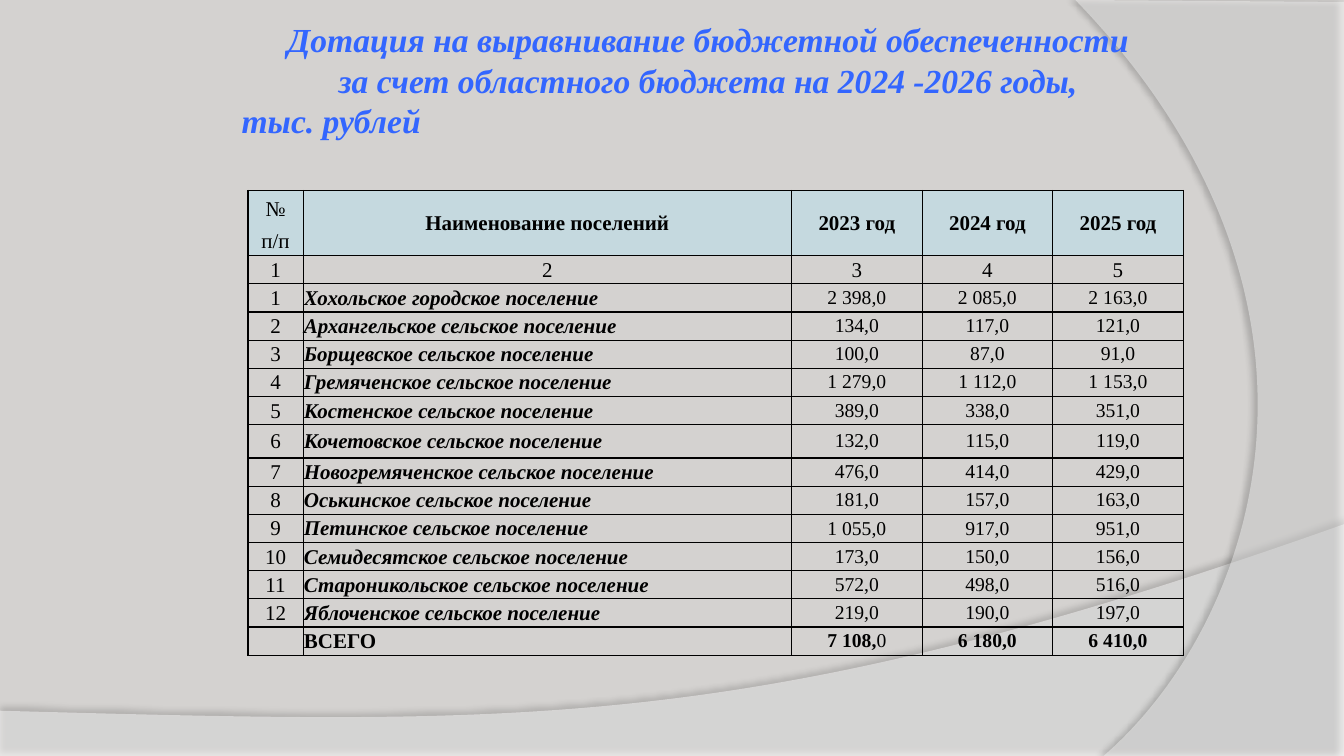
from lxml import etree
from pptx import Presentation
from pptx import util as u
from pptx.dml.color import RGBColor
from pptx.enum import text
from pptx.oxml.ns import qn

FONT = "Times New Roman"
BLACK, WHITE, HEADER, TITLE = "000000", "FFFFFF", "C5D9DF", "3366FF"
CENTER, LEFT, JUSTIFY = text.PP_ALIGN.CENTER, text.PP_ALIGN.LEFT, text.PP_ALIGN.JUSTIFY
MIDDLE = text.MSO_ANCHOR.MIDDLE
WIDTH, HEIGHT = 33.87, 19.05

# Wording, alignment and left indent of each line
TITLE_LINES = [
    ("Дотация на выравнивание бюджетной обеспеченности ", CENTER, 0),
    ("за счет областного бюджета на 2024 -2026 годы, ", CENTER, 0),
    ("тыс. рублей", LEFT, 0.12),
]
HEADINGS = ["№", "Наименование поселений", "2023 год", "2024 год", "2025 год"]
SETTLEMENTS = [
    ("Хохольское городское поселение", "2 398,0", "2 085,0", "2 163,0"),
    ("Архангельское сельское поселение", "134,0", "117,0", "121,0"),
    ("Борщевское сельское поселение", "100,0", "87,0", "91,0"),
    ("Гремяченское сельское поселение", "1 279,0", "1 112,0", "1 153,0"),
    ("Костенское сельское поселение", "389,0", "338,0", "351,0"),
    ("Кочетовское сельское поселение", "132,0", "115,0", "119,0"),
    ("Новогремяченское сельское поселение", "476,0", "414,0", "429,0"),
    ("Оськинское сельское поселение", "181,0", "157,0", "163,0"),
    ("Петинское сельское поселение", "1 055,0", "917,0", "951,0"),
    ("Семидесятское сельское поселение", "173,0", "150,0", "156,0"),
    ("Староникольское сельское поселение", "572,0", "498,0", "516,0"),
    ("Яблоченское сельское поселение", "219,0", "190,0", "197,0"),
]
COLUMN_WIDTHS = [1.39, 12.31, 3.29, 3.29, 3.29]
ROW_HEIGHTS = [0.93] + [0.71] * 7 + [0.84] + [0.71] * 7


def rgb(value):
    return RGBColor.from_string(value)


def set_attrs(obj, formats):
    for name, value in formats.items():
        setattr(obj, name, value)


def add_run(p, content, size, color=BLACK, **formats):
    r = p.add_run()
    r.text = content
    set_attrs(r.font, {"name": FONT, "size": u.Pt(size), **formats})
    r.font.color.rgb = rgb(color)


def add_wave(s, corners, controls, opacity, shadow_opacity, distance, angle):
    """Draw a translucent outline, closed by a curve from the last corner to the first."""
    points = [(u.Cm(x), u.Cm(y)) for x, y in corners]
    builder = s.shapes.build_freeform(*points[0])
    builder.add_line_segments(points[1:], close=True)
    sp = builder.convert_to_shape()
    spPr = sp._element.spPr
    closing = next(spPr.iter(qn("a:close")))
    curve = etree.Element(qn("a:cubicBezTo"))
    for x, y in [*controls, corners[0]]:
        etree.SubElement(curve, qn("a:pt"), x=str(u.Cm(x) - sp.left), y=str(u.Cm(y) - sp.top))
    previous = closing.getprevious()
    # Closing may add a straight segment back to the first corner
    if len(list(spPr.iter(qn("a:lnTo")))) == len(corners):
        previous.getparent().remove(previous)
    closing.addprevious(curve)
    sp.fill.solid()
    sp.fill.fore_color.rgb = rgb(WHITE)
    sp.line.fill.background()
    clr = next(spPr.iter(qn("a:srgbClr")))
    etree.SubElement(clr, qn("a:alpha"), val=str(opacity * 1000))
    sp.shadow.inherit = False
    effects = spPr.find(qn("a:effectLst"))
    shadow = etree.SubElement(effects, qn("a:outerShdw"), blurRad=str(u.Pt(4)),
                              dist=str(u.Pt(distance)), dir=str(angle * 60000),
                              rotWithShape="0")
    clr = etree.SubElement(shadow, qn("a:srgbClr"), val=BLACK)
    etree.SubElement(clr, qn("a:alpha"), val=str(shadow_opacity * 1000))


def add_title(s):
    tf = s.shapes.add_textbox(u.Cm(5.72), u.Cm(0.36), u.Cm(24.46), u.Cm(3.33)).text_frame
    tf.word_wrap = True
    for i, (line, alignment, indent) in enumerate(TITLE_LINES):
        p = tf.paragraphs[0] if i == 0 else tf.add_paragraph()
        p.alignment = alignment
        p._p.get_or_add_pPr().set("marL", str(u.Cm(indent)))
        add_run(p, line, 24, TITLE, bold=True, italic=True)


def set_borders(cell, hidden):
    """Draw all four borders but the hidden one."""
    tcPr = cell._tc.get_or_add_tcPr()
    for i, side in enumerate("LRTB"):
        ln = etree.Element(qn("a:ln" + side), w=str(u.Pt(1)))
        if side == hidden:
            etree.SubElement(ln, qn("a:noFill"))
        else:
            fill = etree.SubElement(ln, qn("a:solidFill"))
            etree.SubElement(fill, qn("a:srgbClr"), val=BLACK)
        tcPr.insert(i, ln)


def format_cell(cell, row, col):
    if row < 2:
        cell.fill.solid()
        cell.fill.fore_color.rgb = rgb(HEADER)
    else:
        cell.fill.background()
    side, top = (0.18, 0) if row > 2 and col > 1 else (0.02, 0.02)
    set_attrs(cell, {"vertical_anchor": MIDDLE, "margin_left": u.Cm(side),
                     "margin_right": u.Cm(side), "margin_top": u.Cm(top),
                     "margin_bottom": 0})
    set_borders(cell, {(0, 0): "B", (1, 0): "T"}.get((row, col)))
    p = cell.text_frame.paragraphs[0]
    p.alignment = JUSTIFY if row > 2 and col == 1 else CENTER
    p._p.get_or_add_endParaRPr().set("sz", "1400")
    return p


def add_grants_table(s):
    rows = [HEADINGS, ["п/п", "", "", "", ""], list("12345")]
    rows += [[str(n), *values] for n, values in enumerate(SETTLEMENTS, 1)]
    rows.append(["", "ВСЕГО", "7 108,0", "6 180,0", "6 410,0"])
    total = len(rows) - 1
    frame = s.shapes.add_table(len(rows), len(HEADINGS), u.Cm(6.25), u.Cm(4.8),
                               u.Cm(sum(COLUMN_WIDTHS)), u.Cm(sum(ROW_HEIGHTS)))
    table = frame.table
    set_attrs(table, {"first_row": False, "horz_banding": False})
    for column, width in zip(table.columns, COLUMN_WIDTHS):
        column.width = u.Cm(width)
    for row, height in zip(table.rows, ROW_HEIGHTS):
        row.height = u.Cm(height)
    for col in range(1, len(HEADINGS)):
        table.cell(0, col).merge(table.cell(1, col))
    for i, row in enumerate(rows):
        for j, content in enumerate(row):
            p = format_cell(table.cell(i, j), i, j)
            size = 14 if i > 2 and j > 1 else 15
            bold = i == total or (i == 0 and j > 0) or (i > 2 and j == 1)
            italic = 2 < i < total and j == 1
            if (i, j) == (total, 2):
                add_run(p, content[:-1], size, bold=True)
                add_run(p, content[-1], size, bold=False)
            elif content:
                add_run(p, content, size, bold=bold, italic=italic)


def main():
    prs = Presentation()
    set_attrs(prs, {"slide_width": u.Cm(WIDTH), "slide_height": u.Cm(HEIGHT)})
    s = prs.slides.add_slide(prs.slide_layouts[6])
    s.background.fill.solid()
    s.background.fill.fore_color.rgb = rgb("D4D2D0")
    add_wave(s, [(0, 17.91), (0, HEIGHT), (WIDTH, HEIGHT), (WIDTH, 13.21)],
             [(18.92, 18.52), (13.23, 18.26)], 45, 35, 3.5, 270)
    add_wave(s, [(27.1, 0), (WIDTH, 0.05), (WIDTH, HEIGHT), (27.81, HEIGHT)],
             [(31.65, 15.72), (34.47, 7.62)], 40, 45, 4, 180)
    add_title(s)
    add_grants_table(s)
    prs.save("out.pptx")


if __name__ == "__main__":
    main()
